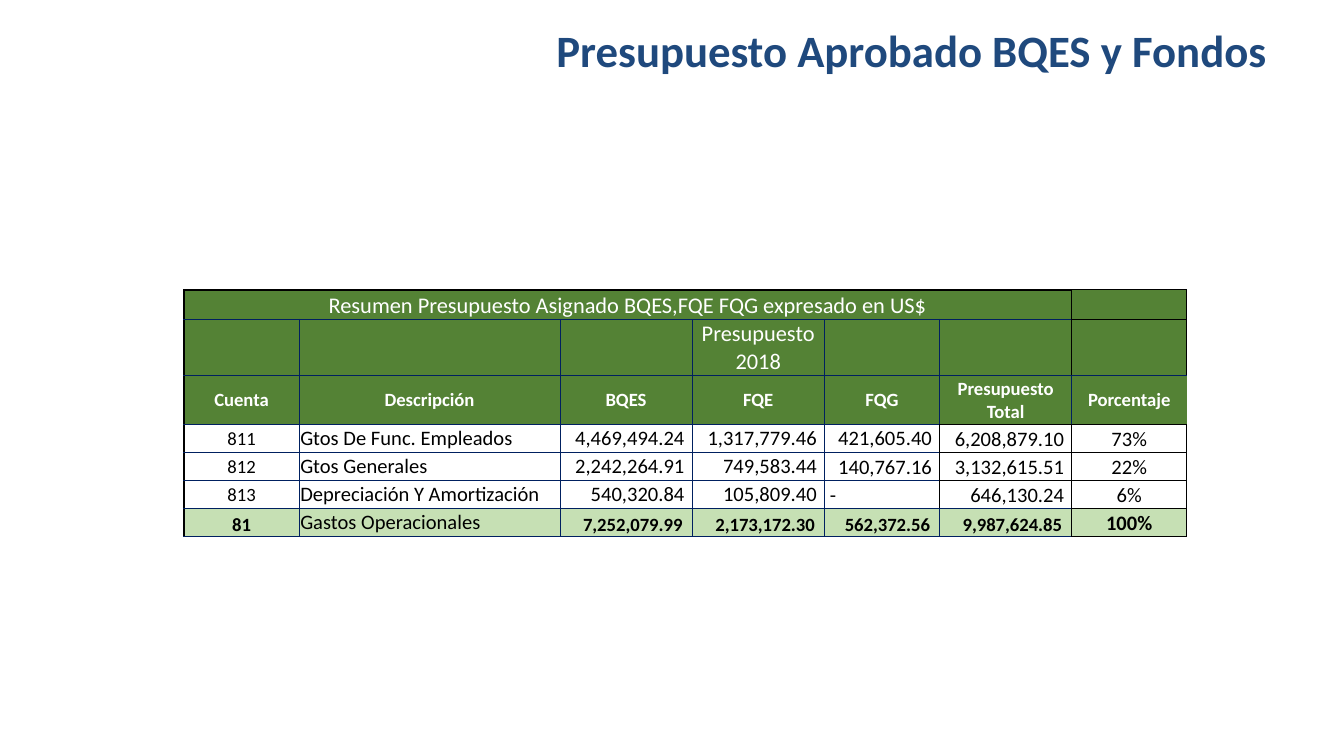
from lxml.etree import SubElement
from pptx import Presentation
from pptx.dml.color import RGBColor
from pptx.enum.text import MSO_ANCHOR, PP_ALIGN
from pptx.oxml import parse_xml
from pptx.oxml.ns import nsdecls, qn
from pptx.util import Pt

FONT = "Calibri"
TITLE_BLUE = RGBColor(0x1F, 0x49, 0x7D)
NAVY = RGBColor(0x00, 0x20, 0x60)
BLACK = RGBColor(0x00, 0x00, 0x00)
WHITE = RGBColor(0xFF, 0xFF, 0xFF)
GREEN = RGBColor(0x54, 0x82, 0x35)
PALE_GREEN = RGBColor(0xC6, 0xE0, 0xB4)

COLUMN_WIDTHS = [61.6, 139.8, 70.8, 70.9, 61.7, 70.8, 61.7]
ROW_HEIGHTS = [15.8, 15.8, 26.2, 15, 15, 15, 15]
BUDGET = [
    ["Resumen Presupuesto Asignado BQES,FQE FQG expresado en US$"] + [""] * 6,
    ["", "", "", "Presupuesto 2018", "", "", ""],
    ["Cuenta", "Descripción", "BQES", "FQE", "FQG", "Presupuesto Total", "Porcentaje"],
    ["811", "Gtos De Func. Empleados", "4,469,494.24", "1,317,779.46", "421,605.40", "6,208,879.10", "73%"],
    ["812", "Gtos Generales", "2,242,264.91", "749,583.44", "140,767.16", "3,132,615.51", "22%"],
    ["813", "Depreciación Y Amortización", "540,320.84", "105,809.40", "-", "646,130.24", "6%"],
    ["81", "Gastos Operacionales", "7,252,079.99", "2,173,172.30", "562,372.56", "9,987,624.85", "100%"],
]
HEADING_ROW, TOTAL_ROW = 2, 6
ACCOUNT, DESCRIPTION, LAST_FUND, TOTAL, PERCENT = 0, 1, 4, 5, 6


def format_runs(paragraph, size, color, bold):
    """Apply the font to every run of a paragraph."""
    for run in paragraph.runs:
        run.font.name = FONT
        run.font.size = Pt(size)
        run.font.bold = bold
        run.font.color.rgb = color


def add_title(slide, wording):
    """Place the right-aligned title."""
    title = slide.shapes.title
    title.left, title.top, title.width, title.height = Pt(54), Pt(6.5), Pt(648), Pt(40.3)
    frame = title.text_frame
    frame.text = wording
    frame.vertical_anchor = MSO_ANCHOR.MIDDLE
    frame.margin_right = Pt(23.5)
    frame.paragraphs[0].alignment = PP_ALIGN.RIGHT
    format_runs(frame.paragraphs[0], 24, TITLE_BLUE, True)


def add_borders(cell, row, column):
    """Rule the cell in navy, with black for the outer edges and results."""
    result = column == PERCENT and row != HEADING_ROW
    result = result or (column == TOTAL and HEADING_ROW < row < TOTAL_ROW)
    properties = cell._tc.get_or_add_tcPr()
    for position, side in enumerate("LRTB"):
        outer_left = side == "L" and column == ACCOUNT
        outer_top = side == "T" and row == 0
        color = BLACK if result or outer_left or outer_top else NAVY
        width = Pt(1) if outer_left or (outer_top and column != PERCENT) else Pt(0.5)
        stroke = f'<a:solidFill><a:srgbClr val="{color}"/></a:solidFill>'
        if side == "R" and column == PERCENT and row == HEADING_ROW:
            stroke = "<a:noFill/>"
        border = parse_xml(f'<a:ln{side} {nsdecls("a")} w="{width}">{stroke}</a:ln{side}>')
        properties.insert(position, border)


def text_size(row, column):
    """Return the type size for a table position."""
    if row < HEADING_ROW:
        return 12
    if row == HEADING_ROW or column == ACCOUNT:
        return 10
    return 10 if row == TOTAL_ROW and DESCRIPTION < column < PERCENT else 11


def text_anchor(row, column):
    """Return the vertical anchor for a table position."""
    low = row < HEADING_ROW
    low = low or (row == TOTAL_ROW and column != DESCRIPTION)
    low = low or (row > HEADING_ROW and column in (TOTAL, PERCENT))
    low = low or (row > HEADING_ROW + 1 and column == LAST_FUND)
    return MSO_ANCHOR.BOTTOM if low else MSO_ANCHOR.MIDDLE


def fill_cell(cell, wording, row, column):
    """Write and format one table cell."""
    heading = row <= HEADING_ROW
    amount = not heading and DESCRIPTION < column < PERCENT
    cell.margin_left = cell.margin_right = cell.margin_top = Pt(0.7)
    cell.margin_bottom = 0
    cell.vertical_anchor = text_anchor(row, column)
    cell.fill.solid()
    cell.fill.fore_color.rgb = GREEN if heading else PALE_GREEN if row == TOTAL_ROW else WHITE
    add_borders(cell, row, column)
    cell.text_frame.text = wording
    paragraph = cell.text_frame.paragraphs[0]
    paragraph.alignment = PP_ALIGN.CENTER
    if wording == "-":
        paragraph.alignment = PP_ALIGN.LEFT
        cell.margin_left = Pt(3)
    elif amount:
        paragraph.alignment = PP_ALIGN.RIGHT
        cell.margin_right = Pt(5.2 if row == TOTAL_ROW else 4)
    elif not heading and column == DESCRIPTION:
        paragraph.alignment = PP_ALIGN.LEFT
    bold = row == HEADING_ROW or (row == TOTAL_ROW and column != DESCRIPTION)
    size = text_size(row, column)
    format_runs(paragraph, size, WHITE if heading else BLACK, bold)
    if not wording:
        SubElement(paragraph._p, qn("a:endParaRPr"), sz=str(size * 100))


def add_budget_table(slide):
    """Build the budget summary table."""
    frame = slide.shapes.add_table(
        len(BUDGET), len(COLUMN_WIDTHS), Pt(98.6), Pt(155.3),
        Pt(sum(COLUMN_WIDTHS)), Pt(sum(ROW_HEIGHTS)))
    table = frame.table
    table.first_row = table.horz_banding = False
    for column, width in zip(table.columns, COLUMN_WIDTHS):
        column.width = Pt(width)
    for row, height in zip(table.rows, ROW_HEIGHTS):
        row.height = Pt(height)
    for row, entries in enumerate(BUDGET):
        for column, wording in enumerate(entries):
            fill_cell(table.cell(row, column), wording, row, column)
    table.cell(0, ACCOUNT).merge(table.cell(0, TOTAL))


def main():
    """Build and save the presentation."""
    presentation = Presentation()
    presentation.slide_width, presentation.slide_height = Pt(720), Pt(405)
    slide = presentation.slides.add_slide(presentation.slide_layouts[5])
    add_title(slide, "Presupuesto Aprobado BQES y Fondos")
    add_budget_table(slide)
    presentation.save("out.pptx")


if __name__ == "__main__":
    main()
